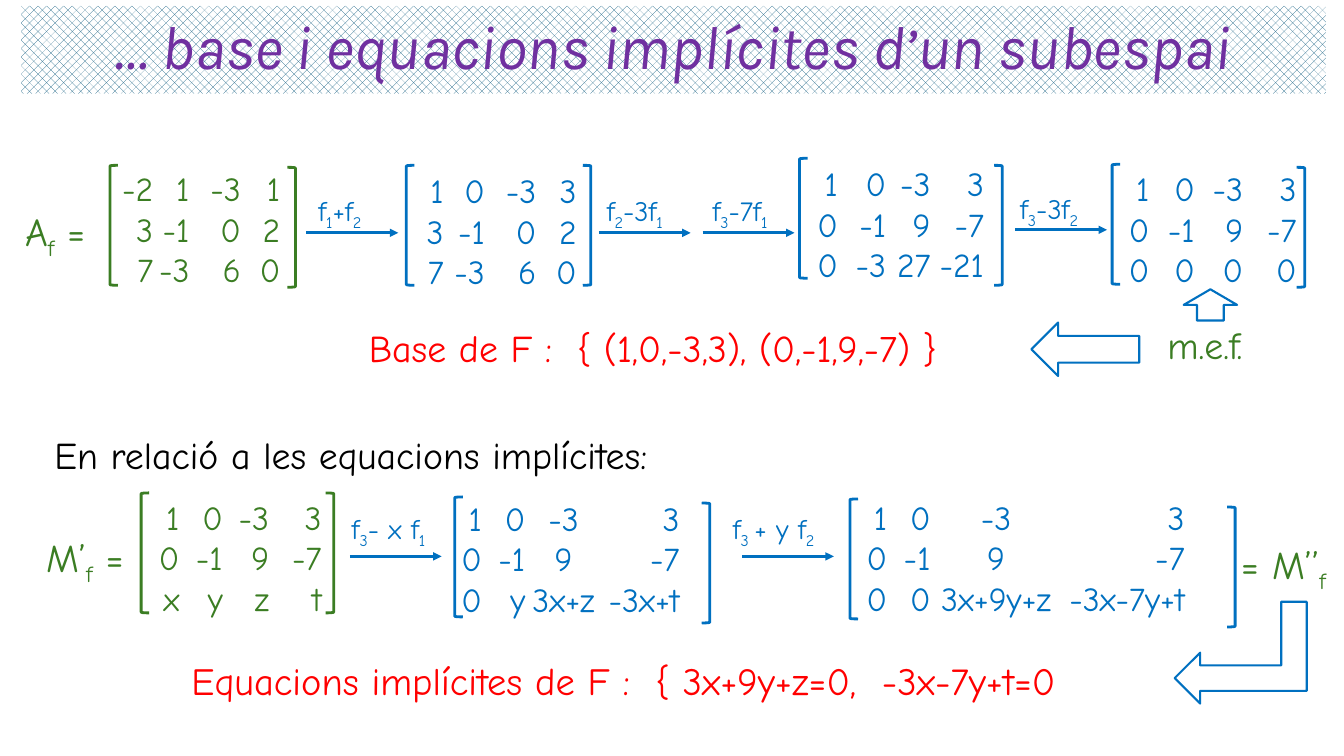
from lxml.etree import SubElement
from pptx import Presentation
from pptx.dml.color import RGBColor
from pptx.enum.dml import MSO_PATTERN
from pptx.enum.shapes import MSO_CONNECTOR, MSO_SHAPE
from pptx.enum.text import MSO_ANCHOR, MSO_AUTO_SIZE, PP_ALIGN
from pptx.oxml.ns import qn
from pptx.util import Inches, Pt

GREEN, BLUE, RED, BLACK, PURPLE = "3B7D23", "0070C0", "FF0000", "000000", "7030A0"
BODY_FONT, TITLE_FONT = "Comic Neue", "Karla"
CELL = 0.1
BRACKET_WIDTH, BRACKET_HEIGHT, ARROW_LENGTH = 0.8, 11.9, 9.1


def grid(*cells):
    """Turn grid columns or rows into lengths."""
    return [Inches(cell * CELL) for cell in cells]


def colour(value):
    """Turn a hex string into a colour."""
    return RGBColor.from_string(value)


def set_format(target, **values):
    """Set each named attribute on the target."""
    for name, value in values.items():
        setattr(target, name, value)


def add_run(paragraph, text, size, hex_colour, font=BODY_FONT, subscript=False, **style):
    """Add one formatted run, lowered when it is a subscript."""
    run = paragraph.add_run()
    run.text = text
    set_format(run.font, name=font, size=Pt(size), **style)
    run.font.color.rgb = colour(hex_colour)
    if subscript:
        run.font._element.set("baseline", "-25000")


def add_box(slide, place, wrap=False, side_margin=0.1):
    """Add an empty text box and return its frame."""
    frame = slide.shapes.add_textbox(*grid(*place)).text_frame
    set_format(frame, word_wrap=wrap, auto_size=MSO_AUTO_SIZE.NONE,
               margin_left=Inches(side_margin), margin_right=Inches(side_margin))
    return frame


def add_formula(slide, place, parts, size, hex_colour, wrap=False):
    """Write parts that alternate between plain text and subscript."""
    paragraph = add_box(slide, place, wrap).paragraphs[0]
    for index, part in enumerate(parts):
        add_run(paragraph, part, size, hex_colour, subscript=index % 2 == 1)


def add_outline(slide, kind, place, hex_colour, width):
    """Add an unfilled preset shape."""
    shape = slide.shapes.add_shape(kind, *grid(*place))
    shape.shadow.inherit = False
    shape.fill.background()
    shape.line.color.rgb = colour(hex_colour)
    shape.line.width = Pt(width)
    return shape


def add_tab_stops(paragraph, stops):
    """Give a paragraph tab stops from (column, alignment) pairs."""
    tab_list = SubElement(paragraph._p.get_or_add_pPr(), qn("a:tabLst"))
    for column, alignment in stops:
        SubElement(tab_list, qn("a:tab"), pos=str(grid(column)[0]), algn=alignment)


def add_matrix(slide, hex_colour, left, right, top, columns, rows, third="r"):
    """Write bracketed rows whose entries line up on tab stops."""
    for kind, corner in ((MSO_SHAPE.LEFT_BRACKET, left), (MSO_SHAPE.RIGHT_BRACKET, right)):
        add_outline(slide, kind, (*corner, BRACKET_WIDTH, BRACKET_HEIGHT), hex_colour, 2)
    start = left[0]
    frame = add_box(slide, (start, top, right[0] - start + 1, 13), True, 0)
    stops = [(column - start, alignment) for column, alignment in zip(columns, ("r", "r", third, "r"))]
    for index, row in enumerate(rows):
        paragraph = frame.add_paragraph() if index else frame.paragraphs[0]
        add_tab_stops(paragraph, stops)
        add_run(paragraph, "".join(f"\t{entry}" for entry in row.split()), 24, hex_colour)


def add_step(slide, arrow, label, parts):
    """Draw a row operation: an arrow with its formula above."""
    column, row = arrow
    connector = slide.shapes.add_connector(
        MSO_CONNECTOR.STRAIGHT, *grid(column, row, column + ARROW_LENGTH, row))
    connector.line.color.rgb = colour(BLUE)
    connector.line.width = Pt(2)
    SubElement(connector.line._get_or_add_ln(), qn("a:tailEnd"), type="triangle")
    SubElement(connector._element.spPr, qn("a:effectLst"))
    add_formula(slide, (*label, 13.3, 4.4), parts, 20, BLUE)


def add_title(slide, text):
    """Fill the title placeholder and give it a woven band."""
    title = slide.shapes.title
    left, top, width, height = grid(2.1, 0.6, 129.4, 8.7)
    set_format(title, left=left, top=top, width=width, height=height)
    title.fill.patterned()
    title.fill.pattern = MSO_PATTERN.WEAVE
    title.fill.fore_color.rgb = colour("156082")
    title.fill.back_color.rgb = colour("FFFFFF")
    set_format(title.text_frame, auto_size=MSO_AUTO_SIZE.NONE,
               vertical_anchor=MSO_ANCHOR.MIDDLE, word_wrap=True)
    paragraph = title.text_frame.paragraphs[0]
    set_format(paragraph, alignment=PP_ALIGN.CENTER, line_spacing=0.9)
    add_run(paragraph, text, 44, PURPLE, TITLE_FONT, italic=True, bold=False)


def add_basis(slide):
    """Reduce the matrix of generators to find a basis."""
    add_formula(slide, (1.5, 20.1, 9.4, 5.7), ("A", "f", " ="), 28, GREEN)
    add_matrix(slide, GREEN, (10.9, 16.4), (28.5, 16.6), 16.2, (15.2, 18.8, 23.9, 27.8),
               ("-2 1 -3 1", "3 -1 0 2", "7 -3 6 0"))
    add_step(slide, (30.4, 23.1), (30.6, 18.7), ("f", "1", "+f", "2"))
    add_matrix(slide, BLUE, (40.3, 16.4), (57.8, 16.4), 16.4, (44, 48.1, 53.2, 57.2),
               ("1 0 -3 3", "3 -1 0 2", "7 -3 6 0"))
    add_step(slide, (59.4, 23.1), (59.2, 18.7), ("f", "2", "-3f", "1"))
    add_step(slide, (69.7, 23.1), (69.7, 18.7), ("f", "3", "-7f", "1"))
    add_matrix(slide, BLUE, (79.3, 15.7), (98.6, 16.4), 15.7, (83.1, 87.9, 92.3, 97.6),
               ("1 0 -3 3", "0 -1 9 -7", "0 -3 27 -21"))
    add_step(slide, (100.7, 22.8), (100.2, 18.5), ("f", "3", "-3f", "2"))
    add_matrix(slide, BLUE, (110.3, 16.3), (128.6, 16.6), 16.2, (114, 118.5, 123.3, 128.6),
               ("1 0 -3 3", "0 -1 9 -7", "0 0 0 0"))
    add_outline(slide, MSO_SHAPE.UP_ARROW, (117.4, 28.7, 5.3, 3.1), BLUE, 1.5)
    add_formula(slide, (114.8, 31.4, 12.2, 5.7), ("m.e.f.",), 27, GREEN)
    add_outline(slide, MSO_SHAPE.LEFT_ARROW, (102.3, 32, 10.7, 5.3), BLUE, 1.5)
    add_formula(slide, (35.6, 31.7, 65.3, 5.6),
                ("Base de F :  { (1,0,-3,3), (0,-1,9,-7) }",), 27, RED)


def add_equations(slide):
    """Reduce the extended matrix to find the implicit equations."""
    add_formula(slide, (4.4, 42.3, 120.6, 10.1),
                ("En relació a les equacions implícites:",), 27, BLACK, True)
    add_formula(slide, (3.6, 52.4, 10.7, 5.7), ("M’", "f", " ="), 28, GREEN)
    add_matrix(slide, GREEN, (14, 48.9), (32.3, 48.9), 48.8, (17.8, 22.1, 26.7, 31.9),
               ("1 0 -3 3", "0 -1 9 -7", "x y z t"))
    add_step(slide, (34.7, 55.2), (33.9, 50.3), ("f", "3", "- x f", "1"))
    add_matrix(slide, BLUE, (45.1, 49.3), (69.6, 49.9), 48.9, (47.8, 52.1, 55.9, 67.4),
               ("1 0 -3 3", "0 -1 9 -7", "0 y 3x+z -3x+t"), "ctr")
    add_step(slide, (73.6, 55.2), (71.7, 50.3), ("f", "3 ", "+ y f", "2"))
    add_matrix(slide, BLUE, (84.3, 49.5), (121.7, 50.3), 48.8, (88, 92.3, 98.8, 117.5),
               ("1 0 -3 3", "0 -1 9 -7", "0 0 3x+9y+z -3x-7y+t"), "ctr")
    add_formula(slide, (122.1, 53.1, 12.6, 5.7), ("= M’’", "f"), 28, GREEN)
    add_formula(slide, (18, 64.7, 100.8, 5.7),
                ("Equacions implícites de F :  { 3x+9y+z=0,  -3x-7y+t=0",), 27.5, RED, True)
    arrow = add_outline(slide, MSO_SHAPE.BENT_UP_ARROW, (118, 58.2, 10.1, 13.1), BLUE, 1.5)
    arrow.rotation = 270
    arrow._element.spPr.xfrm.set("flipH", "1")


def main():
    """Build the slide and save it."""
    presentation = Presentation()
    set_format(presentation, slide_width=Inches(13.33), slide_height=Inches(7.5))
    slide = presentation.slides.add_slide(presentation.slide_layouts[5])
    add_title(slide, "… base i equacions implícites d’un subespai")
    add_basis(slide)
    add_equations(slide)
    presentation.save("out.pptx")


if __name__ == "__main__":
    main()
